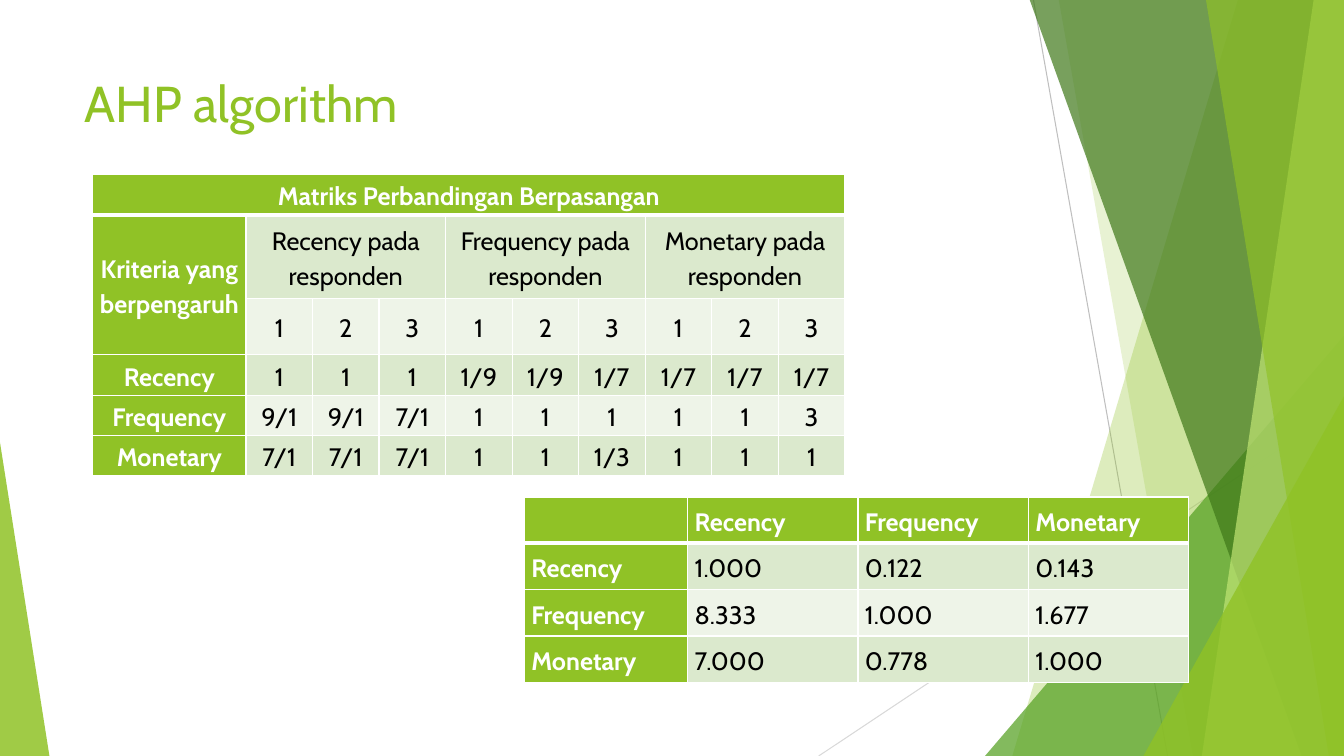
from lxml import etree
from pptx import Presentation
from pptx import util as u
from pptx.dml.color import RGBColor
from pptx.enum import shapes, text
from pptx.oxml.ns import qn

FONT = "Cabin"
GREEN, WHITE, BLACK = "90C226", "FFFFFF", "000000"
BANDS = ("EEF4E8", "DBE9CD")
TOP, BOTTOM, RIGHT = -0.01, 7.5, 13.33

RAYS = [((10.25, 0), (11.58, 7.5), "BFBFBF"),
        ((13.33, 4.03), (8.12, 7.5), "D9D9D9")]

CRITERIA = ["Recency", "Frequency", "Monetary"]
PAIRWISE = [
    ["Matriks Perbandingan Berpasangan"] + [""] * 9,
    ["Kriteria yang berpengaruh"]
    + [label for name in CRITERIA for label in (f"{name} pada responden", "", "")],
    [""] + ["1", "2", "3"] * 3,
    ["Recency", "1", "1", "1", "1/9", "1/9", "1/7", "1/7", "1/7", "1/7"],
    ["Frequency", "9/1", "9/1", "7/1", "1", "1", "1", "1", "1", "3"],
    ["Monetary", "7/1", "7/1", "7/1", "1", "1", "1/3", "1", "1", "1"],
]
PAIRWISE_SPANS = [((0, 0), (0, 9)), ((1, 0), (2, 0))] + [
    ((1, col), (1, col + 2)) for col in (1, 4, 7)]
AVERAGES = [
    [""] + CRITERIA,
    ["Recency", "1.000", "0.122", "0.143"],
    ["Frequency", "8.333", "1.000", "1.677"],
    ["Monetary", "7.000", "0.778", "1.000"],
]


def colour(value):
    return RGBColor.from_string(value)


def set_values(target, values):
    for name, value in values.items():
        setattr(target, name, value)


def paint(facet, fill, opacity):
    """Fill a borderless facet; opacity is a percentage."""
    facet.shadow.inherit = False
    facet.line.fill.background()
    facet.fill.solid()
    facet.fill.fore_color.rgb = colour(fill)
    tint = facet._element.spPr.find(qn("a:solidFill"))[0]
    etree.SubElement(tint, qn("a:alpha"), val=str(opacity * 1000))


def add_ray(slide, start, end, shade):
    ray = slide.shapes.add_connector(
        shapes.MSO_CONNECTOR.STRAIGHT, *map(u.Inches, start + end))
    ray.line.color.rgb = colour(shade)
    ray.line.width = u.Pt(0.75)
    etree.SubElement(ray._element.spPr, qn("a:effectLst"))


def add_band(slide, top_x, bottom_x, fill, opacity):
    """A full-height facet reaching from a slanted left edge to the slide's right edge."""
    corners = [(top_x, TOP), (RIGHT, TOP), (RIGHT, BOTTOM), (bottom_x, BOTTOM)]
    points = [(u.Inches(x), u.Inches(y)) for x, y in corners]
    outline = slide.shapes.build_freeform(*points[0])
    outline.add_line_segments(points[1:], close=True)
    paint(outline.convert_to_shape(), fill, opacity)


def add_wedge(slide, left, top, width, apex, fill, opacity):
    """A triangle standing on the slide's bottom edge."""
    wedge = slide.shapes.add_shape(
        shapes.MSO_SHAPE.ISOSCELES_TRIANGLE,
        *map(u.Inches, (left, top, width, BOTTOM - top)))
    wedge.adjustments[0] = apex
    paint(wedge, fill, opacity)


def add_backdrop(slide):
    for ray in RAYS:
        add_ray(slide, *ray)
    add_band(slide, 12.28, 10.04, GREEN, 30)
    add_band(slide, 10.5, 11.83, GREEN, 20)
    add_wedge(slide, 9.77, 3.33, 3.56, 1, "54A021", 72)
    add_band(slide, 10.21, 12.91, "3F7819", 70)
    add_band(slide, 13.03, 11.92, "C0E474", 70)
    add_band(slide, 11.96, 13.18, GREEN, 65)
    add_wedge(slide, 11.34, 3.93, 1.99, 1, GREEN, 80)
    add_wedge(slide, 0, 4.39, 0.49, 0, GREEN, 85)


def add_title(slide, wording):
    title = slide.shapes.add_textbox(*map(u.Inches, (0.74, 0.67, 9.4, 1.44)))
    set_values(title.text_frame, {
        "word_wrap": True, "vertical_anchor": text.MSO_ANCHOR.TOP, "text": wording})
    font = title.text_frame.paragraphs[0].runs[0].font
    set_values(font, {"name": FONT, "size": u.Pt(36)})
    font.color.rgb = colour(GREEN)


def set_borders(cell, row):
    """White rules, thicker between the header row and the body."""
    widths = {"a:lnL": 1, "a:lnR": 1,
              "a:lnT": 3 if row == 1 else 1, "a:lnB": 3 if row == 0 else 1}
    properties = cell._tc.get_or_add_tcPr()
    for place, (side, width) in enumerate(widths.items()):
        rule = etree.Element(qn(side), w=str(u.Pt(width)))
        fill = etree.SubElement(rule, qn("a:solidFill"))
        etree.SubElement(fill, qn("a:srgbClr"), val=WHITE)
        properties.insert(place, rule)


def style_cell(cell, row, wording, heading, align):
    set_values(cell, {
        "vertical_anchor": text.MSO_ANCHOR.MIDDLE, "text": wording,
        "margin_left": u.Inches(0.07), "margin_right": u.Inches(0.07),
        "margin_top": 0, "margin_bottom": 0})
    cell.fill.solid()
    cell.fill.fore_color.rgb = colour(GREEN if heading else BANDS[row % 2])
    set_borders(cell, row)
    paragraph = cell.text_frame.paragraphs[0]
    set_values(paragraph, {"alignment": align, "line_spacing": 1.15})
    set_values(paragraph.font, {"name": FONT, "size": u.Pt(18), "bold": heading})
    for run in paragraph.runs:
        set_values(run.font, {"name": FONT, "size": u.Pt(18), "bold": heading})
        run.font.color.rgb = colour(WHITE if heading else BLACK)


def add_matrix(slide, left, top, widths, heights, rows, align, spans=()):
    table = slide.shapes.add_table(
        len(heights), len(widths),
        *map(u.Inches, (left, top, sum(widths), sum(heights)))).table
    for column, width in zip(table.columns, widths):
        column.width = u.Inches(width)
    for line, height in zip(table.rows, heights):
        line.height = u.Inches(height)
    for first, last in spans:
        table.cell(*first).merge(table.cell(*last))
    for row, wordings in enumerate(rows):
        for col, wording in enumerate(wordings):
            style_cell(table.cell(row, col), row, wording, row == 0 or col == 0, align)


def main():
    deck = Presentation()
    deck.slide_width, deck.slide_height = u.Inches(RIGHT), u.Inches(BOTTOM)
    slide = deck.slides.add_slide(deck.slide_layouts[6])
    add_backdrop(slide)
    add_title(slide, "AHP algorithm")
    add_matrix(slide, 0.92, 1.73, [1.52] + [0.66] * 9,
               [0.4, 0.83, 0.56, 0.4, 0.4, 0.4], PAIRWISE,
               text.PP_ALIGN.CENTER, PAIRWISE_SPANS)
    add_matrix(slide, 5.2, 4.93, [1.62, 1.69, 1.69, 1.59], [0.46] * 4, AVERAGES,
               text.PP_ALIGN.JUSTIFY)
    deck.save("out.pptx")


if __name__ == "__main__":
    main()
